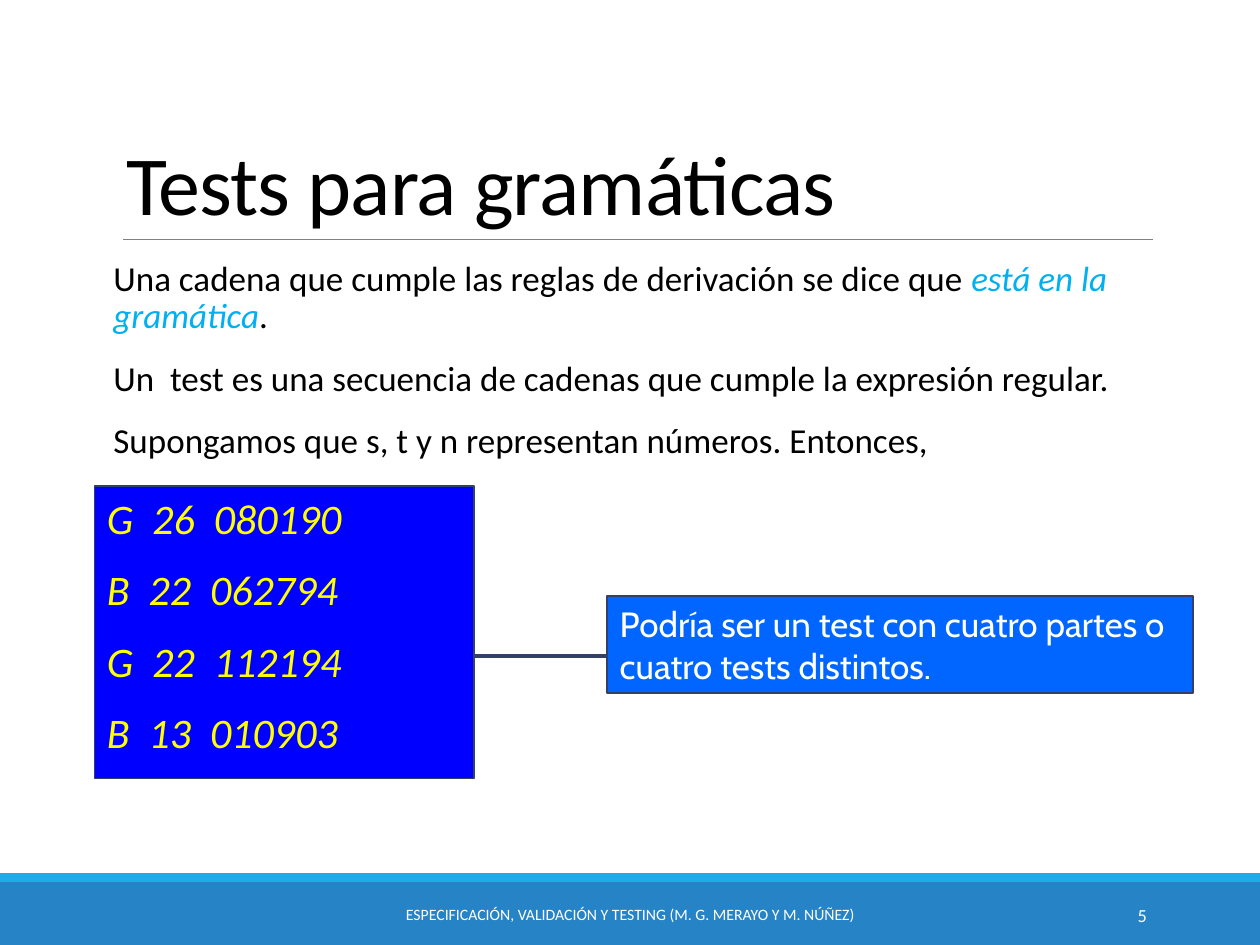
from pptx import Presentation
from pptx.dml.color import RGBColor
from pptx.enum.shapes import MSO_CONNECTOR, MSO_SHAPE
from pptx.enum.text import MSO_ANCHOR, MSO_AUTO_SIZE, PP_ALIGN
from pptx.oxml.ns import qn
from pptx.util import Inches, Pt
from lxml import etree

BLACK = RGBColor(0x00, 0x00, 0x00)
WHITE = RGBColor(0xFF, 0xFF, 0xFF)
GRAY = RGBColor(0x80, 0x80, 0x80)
NAVY = RGBColor(0x34, 0x40, 0x68)
BAND = RGBColor(0x26, 0x83, 0xC6)
STRIPE = RGBColor(0x1C, 0xAD, 0xE4)
ACCENT = RGBColor(0x00, 0xB0, 0xF0)
BLUE = RGBColor(0x00, 0x00, 0xFF)
NOTE_BLUE = RGBColor(0x00, 0x66, 0xFF)
YELLOW = RGBColor(0xFF, 0xFF, 0x00)

BODY = [
    [("Una cadena que cumple las reglas de derivación se dice que ", False),
     ("está en la gramática", True), (".", False)],
    [("Un  test es una secuencia de cadenas que cumple la expresión regular.", False)],
    [("Supongamos que s, t y n representan números. Entonces,", False)],
]
RECORDS = ["G  26  080190", "B  22  062794", "G  22  112194", "B  13  010903"]
NOTE = "Podría ser un test con cuatro partes o cuatro tests distintos."
FOOTER = "ESPECIFICACIÓN, VALIDACIÓN Y TESTING (M. G. MERAYO Y M. NÚÑEZ)"


def place(shape, x, y, w, h):
    shape.left, shape.top = Inches(x), Inches(y)
    shape.width, shape.height = Inches(w), Inches(h)


def add_run(p, text, size, color, font="Calibri", italic=False):
    r = p.add_run()
    r.text = text
    r.font.size = Pt(size)
    r.font.name = font
    r.font.italic = italic
    r.font.color.rgb = color
    return r


def next_paragraph(tf, i):
    return tf.add_paragraph() if i else tf.paragraphs[0]


def add_rect(s, x, y, w, h, fill, line=None):
    sp = s.shapes.add_shape(MSO_SHAPE.RECTANGLE, Inches(x), Inches(y), Inches(w), Inches(h))
    sp.shadow.inherit = False
    sp.fill.solid()
    sp.fill.fore_color.rgb = fill
    if line is None:
        sp.line.fill.background()
    else:
        sp.line.color.rgb = line
        sp.line.width = Pt(1)
    return sp


def add_box(s, x, y, w, h, fill, lines, size, color, font="Calibri", italic=False):
    tf = add_rect(s, x, y, w, h, fill, NAVY).text_frame
    tf.word_wrap = True
    tf.vertical_anchor = MSO_ANCHOR.TOP
    for i, line in enumerate(lines):
        p = next_paragraph(tf, i)
        p.alignment = PP_ALIGN.LEFT
        p.space_before = Pt(size / 2)
        add_run(p, line, size, color, font, italic)


def add_line(s, x1, x2, y, color, width):
    c = s.shapes.add_connector(MSO_CONNECTOR.STRAIGHT, Inches(x1), Inches(y), Inches(x2), Inches(y))
    c.line.color.rgb = color
    c.line.width = Pt(width)
    etree.SubElement(c._element.spPr, qn("a:effectLst"))


def add_label(s, x, w, text, size, align):
    tf = s.shapes.add_textbox(Inches(x), Inches(7.06), Inches(w), Inches(0.4)).text_frame
    tf.word_wrap = True
    tf.vertical_anchor = MSO_ANCHOR.MIDDLE
    p = tf.paragraphs[0]
    p.alignment = align
    add_run(p, text, size, WHITE)


def fill_title(s):
    title = s.shapes.title
    place(title, 0.9, 0.31, 8.3, 1.59)
    tf = title.text_frame
    tf.auto_size = MSO_AUTO_SIZE.NONE
    tf.vertical_anchor = MSO_ANCHOR.BOTTOM
    p = tf.paragraphs[0]
    p.alignment = PP_ALIGN.LEFT
    p.line_spacing = 0.85
    r = add_run(p, "Tests para gramáticas", 48, BLACK)
    r.font._element.set("spc", "-50")


def fill_body(s):
    body = s.placeholders[1]
    place(body, 0.9, 2.02, 8.59, 4.4)
    tf = body.text_frame
    tf.auto_size = MSO_AUTO_SIZE.NONE
    tf.margin_left = tf.margin_right = 0
    for i, runs in enumerate(BODY):
        p = next_paragraph(tf, i)
        p.line_spacing = 0.9
        p.space_before = Pt(12)
        p.space_after = Pt(2)
        pPr = p._p.get_or_add_pPr()
        pPr.set("marL", "0")
        pPr.set("indent", "0")
        etree.SubElement(pPr, qn("a:buNone"))
        for text, accent in runs:
            add_run(p, text, 20, ACCENT if accent else BLACK, italic=accent)


def main():
    prs = Presentation()
    prs.slide_width, prs.slide_height = Inches(10), Inches(7.5)
    s = prs.slides.add_slide(prs.slide_layouts[1])
    add_rect(s, 0, 7, 10, 0.5, BAND)
    add_rect(s, 0, 6.93, 10, 0.07, STRIPE)
    add_line(s, 0.98, 9.15, 1.9, GRAY, 0.5)
    fill_title(s)
    fill_body(s)
    add_label(s, 3.02, 3.96, FOOTER, 9, PP_ALIGN.CENTER)
    add_label(s, 8.12, 1.08, "5", 10.5, PP_ALIGN.RIGHT)
    add_box(s, 0.75, 3.86, 3.01, 2.32, BLUE, RECORDS, 24, YELLOW, italic=True)
    add_box(s, 4.82, 4.73, 4.65, 0.77, NOTE_BLUE, [NOTE], 20, WHITE, font="Cabin")
    add_line(s, 3.75, 4.81, 5.21, NAVY, 2.25)
    prs.save("out.pptx")


if __name__ == "__main__":
    main()
